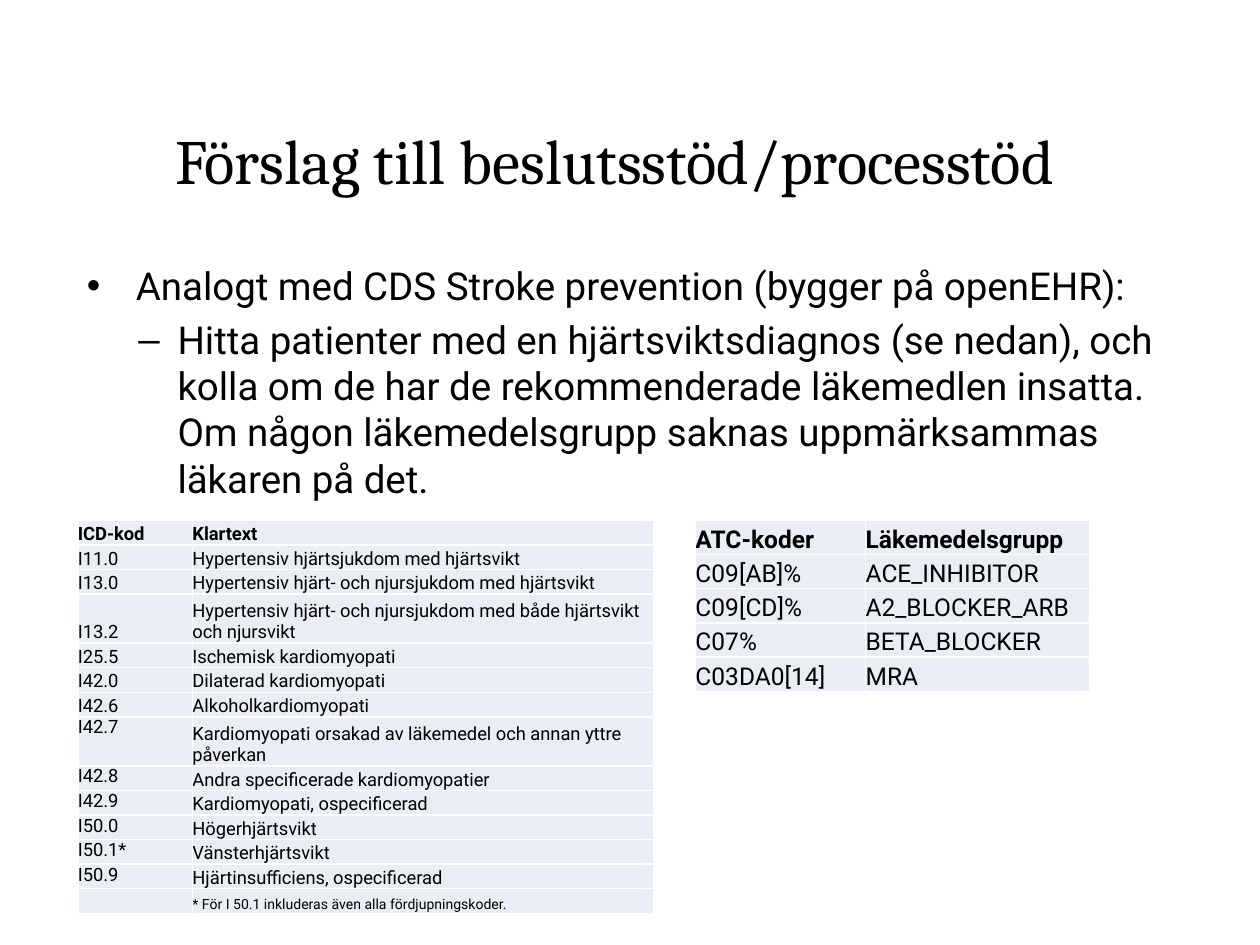
from lxml.etree import SubElement
from pptx import Presentation
from pptx.dml.color import RGBColor
from pptx.enum.text import MSO_ANCHOR as ANC, PP_ALIGN
from pptx.oxml.ns import qn
from pptx.util import Cm, Pt

"""Build the slide on decision support for heart failure."""

BLACK = RGBColor(0x00, 0x00, 0x00)
WHITE = RGBColor(0xFF, 0xFF, 0xFF)
PALE = RGBColor(0xE9, 0xED, 0xF4)


def add_run(p, text, **fmt):
    r = p.add_run()
    r.text = text
    r.font.color.rgb = BLACK
    for name, value in fmt.items():
        setattr(r.font, name, value)


def add_table(s, rows, left, top, widths, heights, size, top_codes=(), note_size=None):
    frame = s.shapes.add_table(len(rows), len(widths), left, top, sum(widths), sum(heights))
    table = frame.table
    table.first_row = table.horz_banding = False
    for col, width in zip(table.columns, widths):
        col.width = width
    for i, (row, height) in enumerate(zip(rows, heights)):
        table.rows[i].height = height
        for j, text in enumerate(row):
            cell = table.cell(i, j)
            anchor = ANC.TOP if j == 0 and text in top_codes else ANC.BOTTOM
            fmt = {"margin_left": 0, "margin_right": 0, "margin_top": 0,
                   "margin_bottom": 0, "vertical_anchor": anchor}
            for name, value in fmt.items():
                setattr(cell, name, value)
            tcPr = cell._tc.get_or_add_tcPr()
            for side in ("lnL", "lnR", "lnT", "lnB"):
                ln = SubElement(tcPr, qn(f"a:{side}"), w=str(Pt(1)))
                SubElement(SubElement(ln, qn("a:solidFill")), qn("a:srgbClr"), val=str(WHITE))
            cell.fill.solid()
            cell.fill.fore_color.rgb = PALE
            p = cell.text_frame.paragraphs[0]
            font_size = note_size if text.startswith("*") else size
            if text:
                add_run(p, text, name="Roboto", size=font_size, bold=i == 0)
            else:
                SubElement(p._p, qn("a:endParaRPr"), sz=str(int(size.pt * 100)))


prs = Presentation()
prs.slide_width, prs.slide_height = Cm(25.4), Cm(19.05)
s = prs.slides.add_slide(prs.slide_layouts[6])

body = s.shapes.add_textbox(Cm(1.27), Cm(5.16), Cm(22.3), Cm(13.08))
tf = body.text_frame
tf.word_wrap = True
bullets = [
    ("•", 0, Cm(1.22), Cm(-0.99), Pt(0), "Analogt med CDS Stroke prevention (bygger på openEHR):"),
    ("–", 1, Cm(2.06), Cm(-0.79), Pt(4.4),
     "Hitta patienter med en hjärtsviktsdiagnos (se nedan), och kolla om de har "
     "de rekommenderade läkemedlen insatta. Om någon läkemedelsgrupp saknas "
     "uppmärksammas läkaren på det."),
]
for i, (char, level, margin, indent, before, text) in enumerate(bullets):
    p = tf.add_paragraph() if i else tf.paragraphs[0]
    p.level = level
    p.space_before = before
    pPr = p._p.get_or_add_pPr()
    pPr.set("marL", str(margin))
    pPr.set("indent", str(indent))
    SubElement(pPr, qn("a:buFont"), typeface="Arial")
    SubElement(pPr, qn("a:buChar"), char=char)
    add_run(p, text, name="Roboto", size=Pt(22))

title = s.shapes.add_textbox(Cm(3.28), Cm(1.45), Cm(21.77), Cm(3.51))
tf = title.text_frame
tf.word_wrap = True
tf.vertical_anchor = ANC.MIDDLE
p = tf.paragraphs[0]
p.alignment = PP_ALIGN.LEFT
add_run(p, "Förslag till beslutsstöd/processtöd", name="Cambria", size=Pt(36))

diagnoses = [
    ("ICD-kod", "Klartext"),
    ("I11.0", "Hypertensiv hjärtsjukdom med hjärtsvikt"),
    ("I13.0", "Hypertensiv hjärt- och njursjukdom med hjärtsvikt"),
    ("I13.2", "Hypertensiv hjärt- och njursjukdom med både hjärtsvikt och njursvikt"),
    ("I25.5", "Ischemisk kardiomyopati"),
    ("I42.0", "Dilaterad kardiomyopati"),
    ("I42.6", "Alkoholkardiomyopati"),
    ("I42.7", "Kardiomyopati orsakad av läkemedel och annan yttre påverkan"),
    ("I42.8", "Andra specificerade kardiomyopatier"),
    ("I42.9", "Kardiomyopati, ospecificerad"),
    ("I50.0", "Högerhjärtsvikt"),
    ("I50.1*", "Vänsterhjärtsvikt"),
    ("I50.9", "Hjärtinsufficiens, ospecificerad"),
    ("", "* För I 50.1 inkluderas även alla fördjupningskoder."),
]
drugs = [
    ("ATC-koder", "Läkemedelsgrupp"),
    ("C09[AB]%", "ACE_INHIBITOR"),
    ("C09[CD]%", "A2_BLOCKER_ARB"),
    ("C07%", "BETA_BLOCKER"),
    ("C03DA0[14]", "MRA"),
]
two_line_codes = ("I13.2", "I42.7")
top_codes = ("I42.7", "I42.8", "I42.9", "I50.0", "I50.1*", "I50.9")
line = Cm(7.92) // 16
heights = [line * 2 if code in two_line_codes else line for code, _ in diagnoses]
add_table(s, diagnoses, Cm(1.57), Cm(10.49), [Cm(2.31), Cm(9.3)], heights,
          Pt(10.5), top_codes, Pt(8))
add_table(s, drugs, Cm(14.02), Cm(10.49), [Cm(3.43), Cm(4.52)], [Cm(0.69)] * len(drugs), Pt(14))

prs.save("out.pptx")
